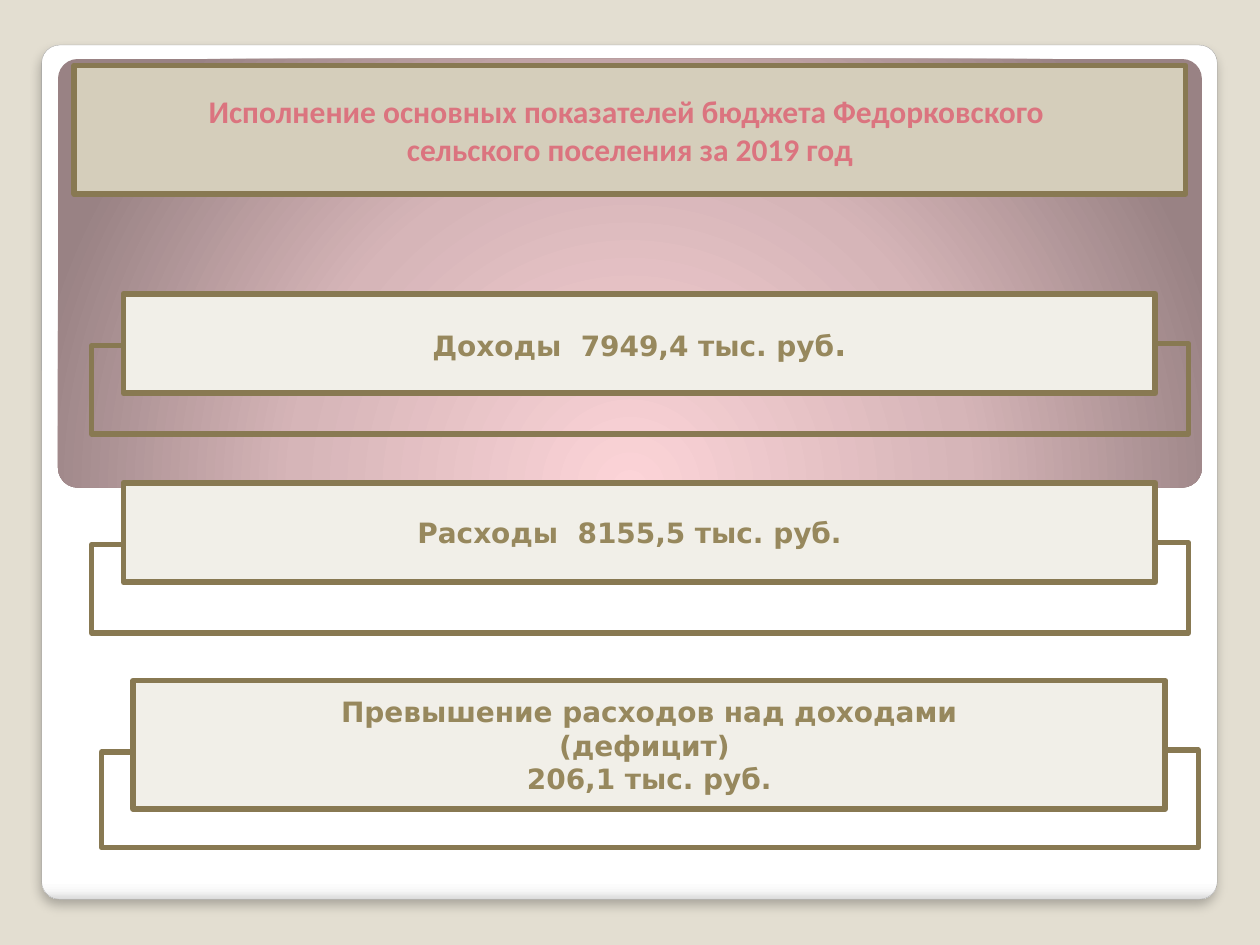
from lxml import etree
from pptx import Presentation
from pptx.dml.color import RGBColor
from pptx.enum.shapes import MSO_CONNECTOR, MSO_SHAPE
from pptx.enum.text import MSO_ANCHOR, MSO_AUTO_SIZE, PP_ALIGN
from pptx.oxml import parse_xml
from pptx.oxml.ns import nsdecls, qn
from pptx.util import Cm, Pt

ROUNDED, RECTANGLE = MSO_SHAPE.ROUNDED_RECTANGLE, MSO_SHAPE.RECTANGLE
ELBOW = MSO_CONNECTOR.ELBOW
MIDDLE, CENTER, NO_FIT = MSO_ANCHOR.MIDDLE, PP_ALIGN.CENTER, MSO_AUTO_SIZE.NONE
OLIVE = "887952"


def rgb(value):
    return RGBColor.from_string(value)


def add_gradient_panel(box, corner, stops, direction):
    """Add a rounded panel; stops are (percent, colour), direction is XML."""
    panel = slide.shapes.add_shape(ROUNDED, *map(Cm, box))
    panel.adjustments[0] = corner
    panel.shadow.inherit = False
    stop_xml = "".join(
        f'<a:gs pos="{percent * 1000}"><a:srgbClr val="{colour}"/></a:gs>'
        for percent, colour in stops)
    gradient = parse_xml(
        f'<a:gradFill {nsdecls("a")} rotWithShape="1">'
        f"<a:gsLst>{stop_xml}</a:gsLst>{direction}</a:gradFill>")
    panel._element.spPr.find(qn("a:prstGeom")).addnext(gradient)
    return panel


prs = Presentation()
prs.slide_width, prs.slide_height = Cm(25.4), Cm(19.05)
slide = prs.slides.add_slide(prs.slide_layouts[5])
slide.background.fill.solid()
slide.background.fill.fore_color.rgb = rgb("E3DED1")

# White sheet with a soft shadow, and the mauve panel on it
sheet = add_gradient_panel(
    (0.84, 0.91, 23.7, 17.22), 0.021,
    [(0, "FFFFFF"), (98, "FFFFFF"), (99, "F7F7F7"), (100, "DADADA")],
    '<a:lin ang="5400000" scaled="0"/>')
sheet.line.color.rgb = rgb("A4A4A4")
sheet.line.width = Pt(0.16)
sheet._element.spPr.find(qn("a:effectLst")).append(parse_xml(
    f'<a:outerShdw {nsdecls("a")} blurRad="{Pt(6)}" dist="{Pt(4)}" dir="5400000">'
    '<a:srgbClr val="000000"><a:alpha val="25000"/></a:srgbClr></a:outerShdw>'))

mauve = add_gradient_panel(
    (1.17, 1.19, 23.06, 8.64), 0.046,
    [(0, "FCD4D8"), (55, "D6B5B8"), (100, "998284")],
    '<a:path path="circle">'
    '<a:fillToRect l="50000" t="175000" r="50000" b="-75000"/></a:path>')
mauve.line.fill.background()

# Title, brought in front of the panels
title = slide.shapes.title
slide.shapes._spTree.append(title._element)
title.left, title.top, title.width, title.height = map(Cm, (1.5, 1.32, 22.4, 2.59))
title_lines = ["Исполнение основных показателей бюджета Федорковского ",
               "сельского поселения за 2019 год"]
boxes = [(title, title_lines, "D5CEBB", "DB747F", "Calibri", 18)]

# Indicators: left, top, height, bracket start below top, bracket drop, lines
CARD_WIDTH, BRACKET_RISE = 20.8, 0.04
indicators = [
    (2.49, 5.92, 2.01, 1.01, 1.78, ["Доходы  7949,4 тыс. руб"]),
    (2.49, 9.73, 2.01, 1.21, 1.78, ["Расходы  8155,5 тыс. руб.  "]),
    (2.69, 13.72, 2.59, 1.4, 1.93, ["Превышение расходов над доходами",
                                    "(дефицит) ", "206,1 тыс. руб."]),
]
for left, top, height, start, drop, lines in indicators:
    card = slide.shapes.add_shape(
        RECTANGLE, Cm(left), Cm(top), Cm(CARD_WIDTH), Cm(height))
    card.shadow.inherit = False
    boxes.append((card, lines, "F1EFE8", "97885D", "DejaVu Sans", 16))

for box, lines, fill, colour, font_name, size in boxes:
    box.fill.solid()
    box.fill.fore_color.rgb = rgb(fill)
    box.line.color.rgb = rgb(OLIVE)
    box.line.width = Pt(3.35)
    frame = box.text_frame
    frame.text = "\n".join(lines)
    frame.word_wrap = True
    frame.auto_size = NO_FIT
    frame.vertical_anchor = MIDDLE
    for paragraph in frame.paragraphs:
        paragraph.alignment = CENTER
        paragraph.font.name = font_name
        paragraph.font.size = Pt(size)
        paragraph.font.bold = True
        paragraph.font.color.rgb = rgb(colour)

income_card = boxes[1][0]
full_stop = income_card.text_frame.paragraphs[0].add_run()
full_stop.text = "."
full_stop.font.size = Pt(18)

# Brackets run from each card's left side, under it, to its right side
for left, top, height, start, drop, lines in indicators:
    bracket = slide.shapes.add_connector(
        ELBOW, Cm(left), Cm(top + start),
        Cm(left + CARD_WIDTH), Cm(top + start + BRACKET_RISE))
    bracket.line.color.rgb = rgb(OLIVE)
    bracket.line.width = Pt(3)
    properties = bracket._element.spPr
    etree.SubElement(properties, qn("a:effectLst"))
    transform = properties.find(qn("a:xfrm"))
    transform.set("rot", "10800000")
    transform.set("flipH", "1")
    geometry = properties.find(qn("a:prstGeom"))
    geometry.set("prst", "bentConnector5")
    guides = geometry.find(qn("a:avLst"))
    for number, ratio in enumerate((-0.031, -drop / BRACKET_RISE, 1.032), 1):
        etree.SubElement(guides, qn("a:gd"), name=f"adj{number}",
                         fmla=f"val {round(ratio * 100000)}")

prs.save("out.pptx")
